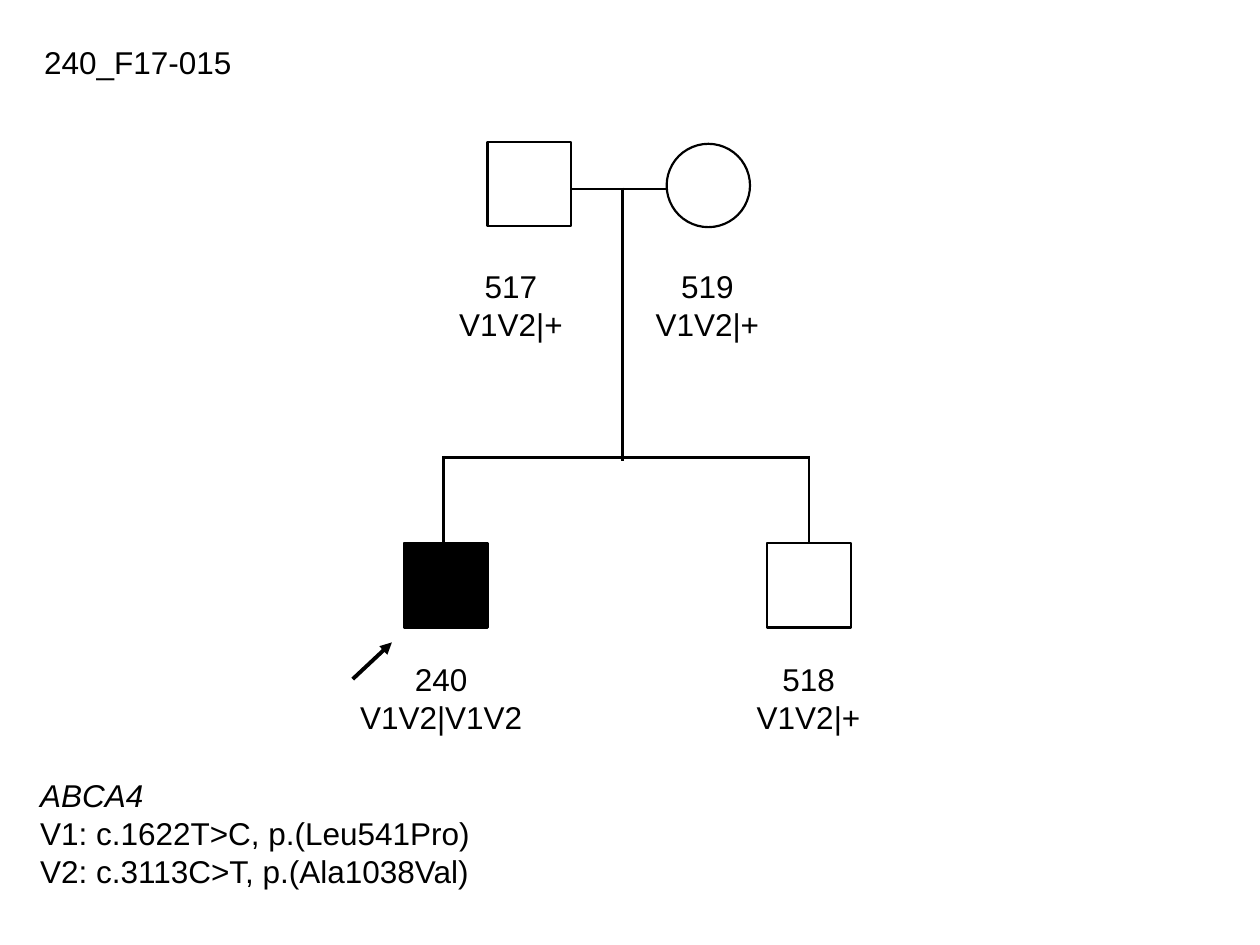
"""Draw a two-generation family tree with variant genotypes."""
from lxml.etree import SubElement
from pptx import Presentation
from pptx.dml.color import RGBColor
from pptx.enum.shapes import MSO_CONNECTOR, MSO_SHAPE
from pptx.enum.text import MSO_AUTO_SIZE, PP_ALIGN
from pptx.oxml.ns import qn
from pptx.util import Cm, Pt

HUES = {"ink": "000000", "paper": "FFFFFF"}
INK = RGBColor.from_string(HUES["ink"])

deck = Presentation()
deck.slide_width, deck.slide_height = Cm(25.4), Cm(19.05)
slide = deck.slides.add_slide(deck.slide_layouts[6])


def add_line(x1, y1, x2, y2, width):
    line = slide.shapes.add_connector(
        MSO_CONNECTOR.STRAIGHT, Cm(x1), Cm(y1), Cm(x2), Cm(y2))
    line.line.color.rgb = INK
    line.line.width = Pt(width)
    SubElement(line._element.spPr, qn("a:effectLst"))
    return line


def add_text(x, y, w, h, rows, align=PP_ALIGN.LEFT, wrap=False):
    box = slide.shapes.add_textbox(Cm(x), Cm(y), Cm(w), Cm(h))
    frame = box.text_frame
    frame.word_wrap = wrap
    frame.auto_size = MSO_AUTO_SIZE.SHAPE_TO_FIT_TEXT
    frame.text = "\n".join(rows)
    for para in frame.paragraphs:
        para.alignment = align
        para.font.name = "Arial"
        para.font.size = Pt(18)
        para.font.color.rgb = INK
    return frame


people = [
    (MSO_SHAPE.OVAL, 13.44, 2.9, 1.68, "paper"),
    (MSO_SHAPE.RECTANGLE, 9.83, 2.87, 1.68, None),
    (MSO_SHAPE.RECTANGLE, 8.15, 10.95, 1.7, "ink"),
    (MSO_SHAPE.RECTANGLE, 15.47, 10.95, 1.7, None),
]
for kind, x, y, tall, fill in people:
    person = slide.shapes.add_shape(kind, Cm(x), Cm(y), Cm(1.68), Cm(tall))
    person.shadow.inherit = False
    person.line.color.rgb = INK
    person.line.width = Pt(1.25)
    if fill:
        person.fill.solid()
        person.fill.fore_color.rgb = RGBColor.from_string(HUES[fill])
    else:
        person.fill.background()

add_line(11.51, 3.81, 13.44, 3.81, 1.5)
add_line(12.55, 3.78, 12.55, 9.3, 1.25)
add_line(8.94, 9.22, 16.31, 9.22, 1.5)
for x in (8.94, 16.31):
    add_line(x, 9.19, x, 10.92, 1.25)

arrow = add_line(7.11, 13.69, 7.9, 12.95, 2.25)
SubElement(arrow.line._get_or_add_ln(), qn("a:tailEnd"), type="triangle")

labels = [
    (8.99, 5.26, 2.62, "517", "V1V2|+"),
    (12.95, 5.26, 2.62, "519", "V1V2|+"),
    (6.99, 13.18, 3.81, "240", "V1V2|V1V2"),
    (14.99, 13.18, 2.62, "518", "V1V2|+"),
]
for x, y, wide, *rows in labels:
    add_text(x, y, wide, 1.8, rows, PP_ALIGN.CENTER)

add_text(0.64, 0.74, 4.32, 1.02, ["240_F17-015"])
legend = add_text(0.56, 15.52, 18.69, 2.57, [
    "ABCA4",
    "V1: c.1622T>C, p.(Leu541Pro)",
    "V2: c.3113C>T, p.(Ala1038Val)",
], wrap=True)
legend.paragraphs[0].font.italic = True

deck.save("out.pptx")
